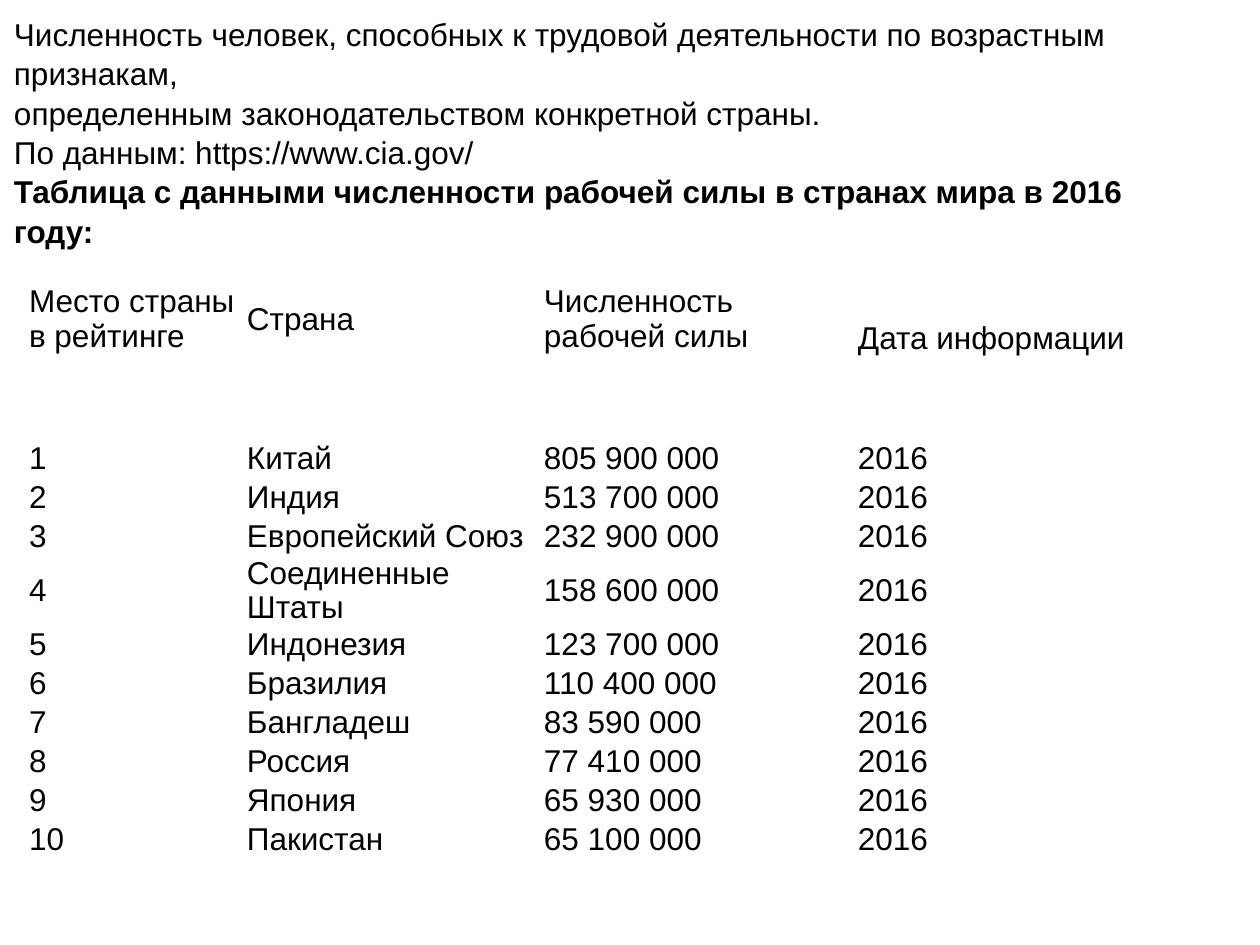
from pptx import Presentation
from pptx.dml.color import RGBColor
from pptx.enum.text import MSO_ANCHOR
from pptx.util import Emu, Pt

MIDDLE = MSO_ANCHOR.MIDDLE
BLACK = RGBColor(0, 0, 0)
FONT = "Arial"
TEXT_SIZE = 18
SCALE = 914400 // 126

INTRO = [
    "Численность человек, способных к трудовой деятельности по возрастным признакам,",
    "определенным законодательством конкретной страны.",
    "По данным: https://www.cia.gov/",
]
TABLE_TITLE = "Таблица с данными численности рабочей силы в странах мира в 2016 году:"
HEADERS = ["Место страны в рейтинге\n", "Страна\n", "Численность рабочей силы\n", "Дата информации"]
WORKFORCE = [
    ("Китай", "805 900 000"),
    ("Индия", "513 700 000"),
    ("Европейский Союз", "232 900 000"),
    ("Соединенные Штаты", "158 600 000"),
    ("Индонезия", "123 700 000"),
    ("Бразилия", "110 400 000"),
    ("Бангладеш", "83 590 000"),
    ("Россия", "77 410 000"),
    ("Япония", "65 930 000"),
    ("Пакистан", "65 100 000"),
]
YEAR = "2016"
COLUMN_WIDTHS = [218, 297, 314, 310]
HEADER_HEIGHT = 202
ROW_HEIGHT = 39


def px(length):
    return Emu(length * SCALE)


def add_span(para, text, bold=False):
    span = para.add_run()
    span.text = text
    font = span.font
    font.name = FONT
    font.size = Pt(TEXT_SIZE)
    font.bold = bold
    font.color.rgb = BLACK


def clear_margins(holder):
    holder.margin_left = holder.margin_right = 0
    holder.margin_top = holder.margin_bottom = 0
    holder.vertical_anchor = MIDDLE


def add_intro(page, left, top, width, height):
    box = page.shapes.add_textbox(px(left), px(top), px(width), px(height))
    frame = box.text_frame
    frame.word_wrap = True
    clear_margins(frame)
    for index, text in enumerate(INTRO):
        para = frame.paragraphs[0] if index == 0 else frame.add_paragraph()
        para.line_spacing = 1.04
        add_span(para, text)
    para.add_line_break()
    add_span(para, TABLE_TITLE, bold=True)


def fill_cell(cell, text):
    cell.fill.background()
    clear_margins(cell)
    para = cell.text_frame.paragraphs[0]
    para.line_spacing = 0.97
    add_span(para, text.rstrip("\n"))
    if text.endswith("\n"):
        para.add_line_break()
        para.font.size = Pt(TEXT_SIZE)
        add_span(para, "")


def add_workforce_table(page, left, top):
    rows = [HEADERS] + [
        (str(rank), country, count, YEAR)
        for rank, (country, count) in enumerate(WORKFORCE, start=1)
    ]
    height = HEADER_HEIGHT + ROW_HEIGHT * len(WORKFORCE)
    frame = page.shapes.add_table(
        len(rows), len(COLUMN_WIDTHS),
        px(left), px(top), px(sum(COLUMN_WIDTHS)), px(height),
    )
    table = frame.table
    table.first_row = False
    table.horz_banding = False
    style = table._tbl.tblPr.find("{*}tableStyleId")
    style.text = "{2D5ABB26-0587-4C30-8999-92F81FD0307C}"
    for column, width in zip(table.columns, COLUMN_WIDTHS):
        column.width = px(width)
    for index, values in enumerate(rows):
        table.rows[index].height = px(ROW_HEIGHT if index else HEADER_HEIGHT)
        for cell, text in zip(table.rows[index].cells, values):
            fill_cell(cell, text)


def main():
    deck = Presentation()
    deck.slide_width = px(1260)
    deck.slide_height = px(945)
    page = deck.slides.add_slide(deck.slide_layouts[6])
    add_workforce_table(page, 29, 238)
    add_intro(page, 14, 17, 1155, 229)
    deck.save("out.pptx")


if __name__ == "__main__":
    main()
